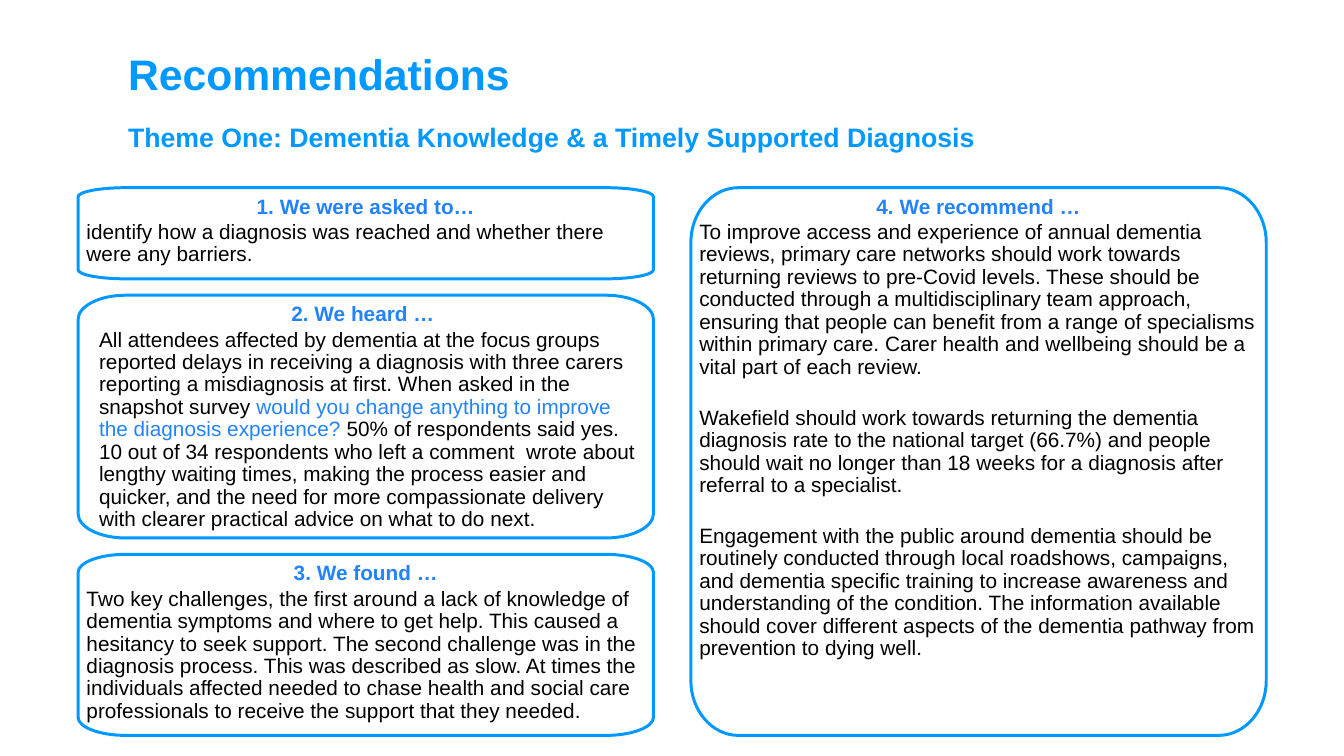
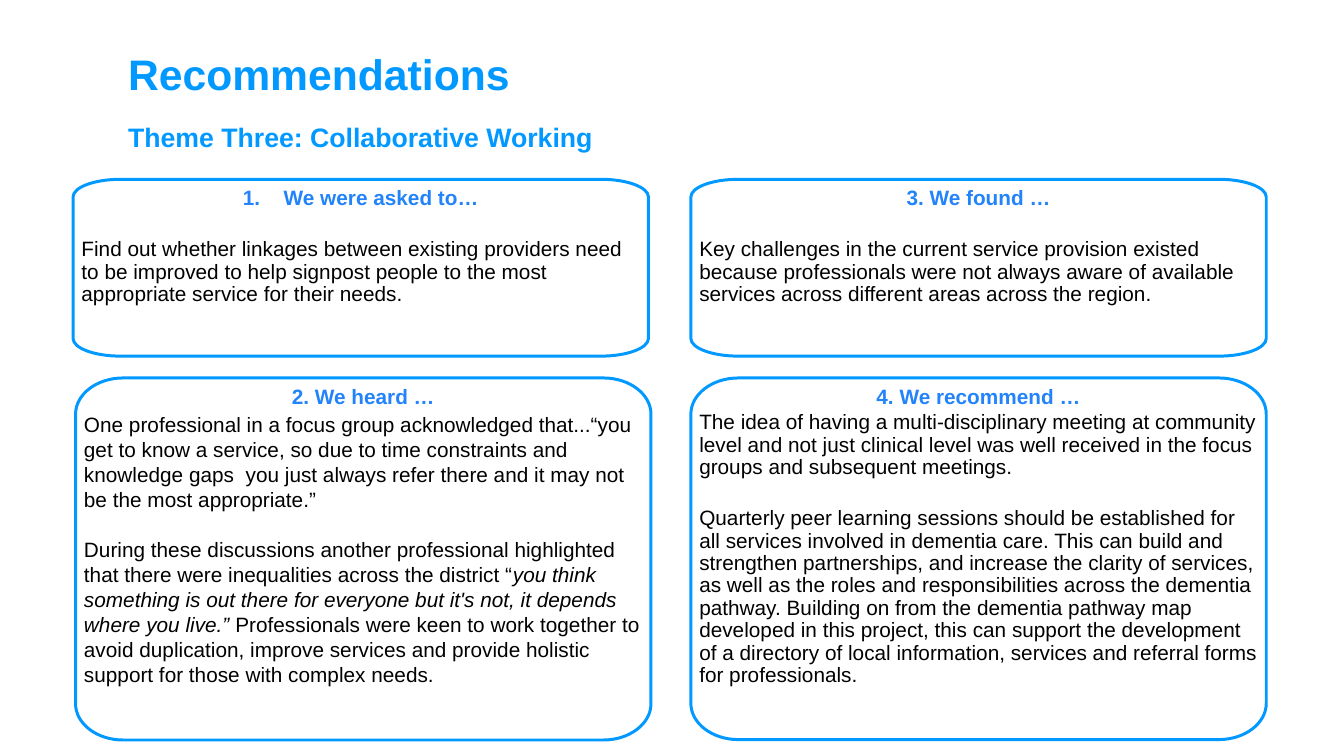
from copy import deepcopy
from dataclasses import dataclass

from lxml.etree import SubElement
from pptx import Presentation
from pptx.dml.color import RGBColor
from pptx.enum.text import MSO_ANCHOR, PP_ALIGN
from pptx.oxml.ns import qn
from pptx.util import Cm, Pt

SKY = RGBColor(0x01, 0x99, 0xFF)
BLUE = RGBColor(0x22, 0x83, 0xFA)
BLACK = RGBColor(0, 0, 0)
WHITE = RGBColor(255, 255, 255)
FONT = "Arial"
BODY_SIZE = 14
BLANK_LAYOUT = 6

COLUMN_WIDTH = 13.7
LEFT_COLUMN = 1.86
RIGHT_COLUMN = 16.45
CORNER_WIDTH = 1.13
CORNER_SHARE = 0.1
CURVE_PULL = 0.55
PARAGRAPH_GAP = 17.2


@dataclass
class Card:
    """A heading with body paragraphs, each one a text or a list of (text, format) runs."""
    height: float
    heading: str
    body: list
    shift: float = 0
    numbered: bool = False
    gap_below_heading: bool = False
    line_spacing: float = 0.9
    body_indent: float = 0


def add_run(paragraph, text, *, size=BODY_SIZE, color=BLACK, bold=False, italic=False):
    run = paragraph.add_run()
    run.text = text
    font = run.font
    font.name = FONT
    font.size = Pt(size)
    font.bold = bold
    font.italic = italic
    font.color.rgb = color
    return run


def set_indent(paragraph, left, first_line=0):
    properties = paragraph._p.get_or_add_pPr()
    properties.set("marL", str(Cm(left)))
    properties.set("indent", str(Cm(first_line)))
    return properties


def add_title(slide, theme):
    text_box = slide.shapes.add_textbox(Cm(3.05), Cm(1.1), Cm(22.38), Cm(1.37))
    frame = text_box.text_frame
    frame.word_wrap = True
    frame.vertical_anchor = MSO_ANCHOR.TOP
    frame.margin_left = frame.margin_right = frame.margin_top = frame.margin_bottom = 0
    paragraph = frame.paragraphs[0]
    paragraph.line_spacing = Pt(36)
    heading = add_run(paragraph, "Recommendations", size=28.8, color=SKY, bold=True)
    paragraph.add_line_break()
    line_break = paragraph._p.find(qn("a:br"))
    line_break.append(deepcopy(heading._r.find(qn("a:rPr"))))
    add_run(paragraph, theme, size=18, color=SKY, bold=True)


def bend_corners(shape):
    """Turn every other segment of the outline into a quarter ellipse."""
    outline = next(shape._element.iter(qn("a:path")))
    segments = [segment for segment in outline if len(segment)]
    ends = [(int(segment[0].get("x")), int(segment[0].get("y"))) for segment in segments]
    for index in range(1, len(segments) - 1, 2):
        (start_x, start_y), (end_x, end_y) = ends[index - 1], ends[index]
        corner = (start_x, end_y) if index % 4 == 1 else (end_x, start_y)
        curve = outline.makeelement(qn("a:cubicBezTo"))
        for point in (ends[index - 1], ends[index]):
            x, y = (round(value + CURVE_PULL * (target - value))
                    for value, target in zip(point, corner))
            SubElement(curve, qn("a:pt"), x=str(x), y=str(y))
        SubElement(curve, qn("a:pt"), x=str(end_x), y=str(end_y))
        outline.replace(segments[index], curve)


def add_rounded_box(slide, left, top, width, height):
    radius_x, radius_y = CORNER_WIDTH, height * CORNER_SHARE
    right, bottom = left + width, top + height
    corners = [
        (left, top + radius_y), (left + radius_x, top),
        (right - radius_x, top), (right, top + radius_y),
        (right, bottom - radius_y), (right - radius_x, bottom),
        (left + radius_x, bottom), (left, bottom - radius_y),
    ]
    points = [(Cm(x), Cm(y)) for x, y in corners]
    builder = slide.shapes.build_freeform(*points[0], scale=1.0)
    builder.add_line_segments(points[1:] + points[:1], close=True)
    shape = builder.convert_to_shape()
    bend_corners(shape)
    shape.shadow.inherit = False
    shape.fill.solid()
    shape.fill.fore_color.rgb = WHITE
    shape.line.color.rgb = SKY
    shape.line.width = Pt(2)
    return shape


def add_heading(paragraph, card):
    paragraph.alignment = PP_ALIGN.CENTER
    if card.numbered:
        properties = set_indent(paragraph, 0.97, -0.97)
        SubElement(properties, qn("a:buFont"), typeface="+mj-lt")
        SubElement(properties, qn("a:buAutoNum"), type="arabicPeriod")
    paragraph.line_spacing = 0.9
    paragraph.space_after = Pt(2.1)
    add_run(paragraph, card.heading, color=BLUE, bold=True)


def add_card(slide, card, left, top):
    frame = add_rounded_box(slide, left, top, COLUMN_WIDTH, card.height).text_frame
    frame.word_wrap = True
    frame.vertical_anchor = MSO_ANCHOR.TOP
    frame.margin_left = frame.margin_right = frame.margin_top = Cm(0.2)
    frame.margin_bottom = Cm(1.5)
    add_heading(frame.paragraphs[0], card)
    for index, content in enumerate(card.body):
        paragraph = frame.add_paragraph()
        paragraph.alignment = PP_ALIGN.LEFT
        set_indent(paragraph, card.body_indent)
        paragraph.line_spacing = card.line_spacing
        if index or card.gap_below_heading:
            paragraph.space_before = Pt(PARAGRAPH_GAP)
        paragraph.space_after = Pt(2.1 if card.line_spacing < 1 else 0)
        runs = [(content, {})] if isinstance(content, str) else content
        for text, text_format in runs:
            add_run(paragraph, text, **text_format)


def add_column(slide, cards, left, top, gap):
    for card in cards:
        add_card(slide, card, left + card.shift, top)
        top += card.height + gap


def add_theme_slide(presentation, theme, left_cards, right_cards, top, gap):
    slide = presentation.slides.add_slide(presentation.slide_layouts[BLANK_LAYOUT])
    add_title(slide, theme)
    add_column(slide, left_cards, LEFT_COLUMN, top, gap)
    add_column(slide, right_cards, RIGHT_COLUMN, top, gap)


DIAGNOSIS_LEFT = [
    Card(2.17, "1. We were asked to…", [
        "identify how a diagnosis was reached and whether there were any barriers.",
    ]),
    Card(5.78, "2. We heard … ", [[
        ("All attendees affected by dementia at the focus groups reported delays in "
         "receiving a diagnosis with three carers reporting a misdiagnosis at first. "
         "When asked in the snapshot survey ", {}),
        ("would you change anything to improve the diagnosis experience?",
         {"color": BLUE}),
        (" 50% of respondents said yes. 10 out of 34 respondents who left a comment  "
         "wrote about lengthy waiting times, making the process easier and quicker, "
         "and the need for more compassionate delivery with clearer practical advice "
         "on what to do next.", {}),
    ]], body_indent=0.3),
    Card(4.31, "3. We found …", [
        "Two key challenges, the first around a lack of knowledge of dementia symptoms "
        "and where to get help. This caused a hesitancy to seek support. The second "
        "challenge was in the diagnosis process. This was described as slow. At times "
        "the individuals affected needed to chase health and social care professionals "
        "to receive the support that they needed.",
    ]),
]
DIAGNOSIS_RIGHT = [
    Card(13.04, "4. We recommend …", [
        "To improve access and experience of annual dementia reviews, primary care "
        "networks should work towards returning reviews to pre-Covid levels. These "
        "should be conducted through a multidisciplinary team approach, ensuring that "
        "people can benefit from a range of specialisms within primary care. Carer "
        "health and wellbeing should be a vital part of each review.",
        "Wakefield should work towards returning the dementia diagnosis rate to the "
        "national target (66.7%) and people should wait no longer than 18 weeks for a "
        "diagnosis after referral to a specialist.",
        "Engagement with the public around dementia should be routinely conducted "
        "through local roadshows, campaigns, and dementia specific training to increase "
        "awareness and understanding of the condition. The information available should "
        "cover different aspects of the dementia pathway from prevention to dying well.",
    ]),
]
COLLABORATION_LEFT = [
    Card(4.21, "We were asked to…", [
        "Find out whether linkages between existing providers need to be improved to "
        "help signpost people to the most appropriate service for their needs.",
    ], shift=-0.12, numbered=True, gap_below_heading=True),
    Card(8.62, "2. We heard …", [
        "One professional in a focus group acknowledged that...“you get to know a "
        "service, so due to time constraints and knowledge gaps  you just always refer "
        "there and it may not be the most appropriate.”",
        [
            ("During these discussions another professional highlighted that there were "
             "inequalities across the district “", {}),
            ("you think something is out there for everyone but it's not, it depends "
             "where you live.” ", {"italic": True}),
            ("Professionals were keen to work together to avoid duplication, improve "
             "services and provide holistic support for those with complex needs.", {}),
        ],
    ], shift=-0.06, line_spacing=1.0),
]
COLLABORATION_RIGHT = [
    Card(4.21, "3. We found …", [
        "Key challenges in the current service provision existed because professionals "
        "were not always aware of available services across different areas across the "
        "region.",
    ], gap_below_heading=True),
    Card(8.61, "4. We recommend …", [
        "The idea of having a multi-disciplinary meeting at community level and not just "
        "clinical level was well received in the focus groups and subsequent meetings.",
        "Quarterly peer learning sessions should be established for all services "
        "involved in dementia care. This can build and strengthen partnerships, and "
        "increase the clarity of services, as well as the roles and responsibilities "
        "across the dementia pathway. Building on from the dementia pathway map "
        "developed in this project, this can support the development of a directory of "
        "local information, services and referral forms for professionals.",
    ]),
]


def main():
    presentation = Presentation()
    presentation.slide_width = Cm(32)
    presentation.slide_height = Cm(18)
    add_theme_slide(presentation,
                    "Theme One: Dementia Knowledge & a Timely Supported Diagnosis",
                    DIAGNOSIS_LEFT, DIAGNOSIS_RIGHT, top=4.47, gap=0.39)
    add_theme_slide(presentation, "Theme Three: Collaborative Working",
                    COLLABORATION_LEFT, COLLABORATION_RIGHT, top=4.27, gap=0.52)
    presentation.save("out.pptx")


if __name__ == "__main__":
    main()
